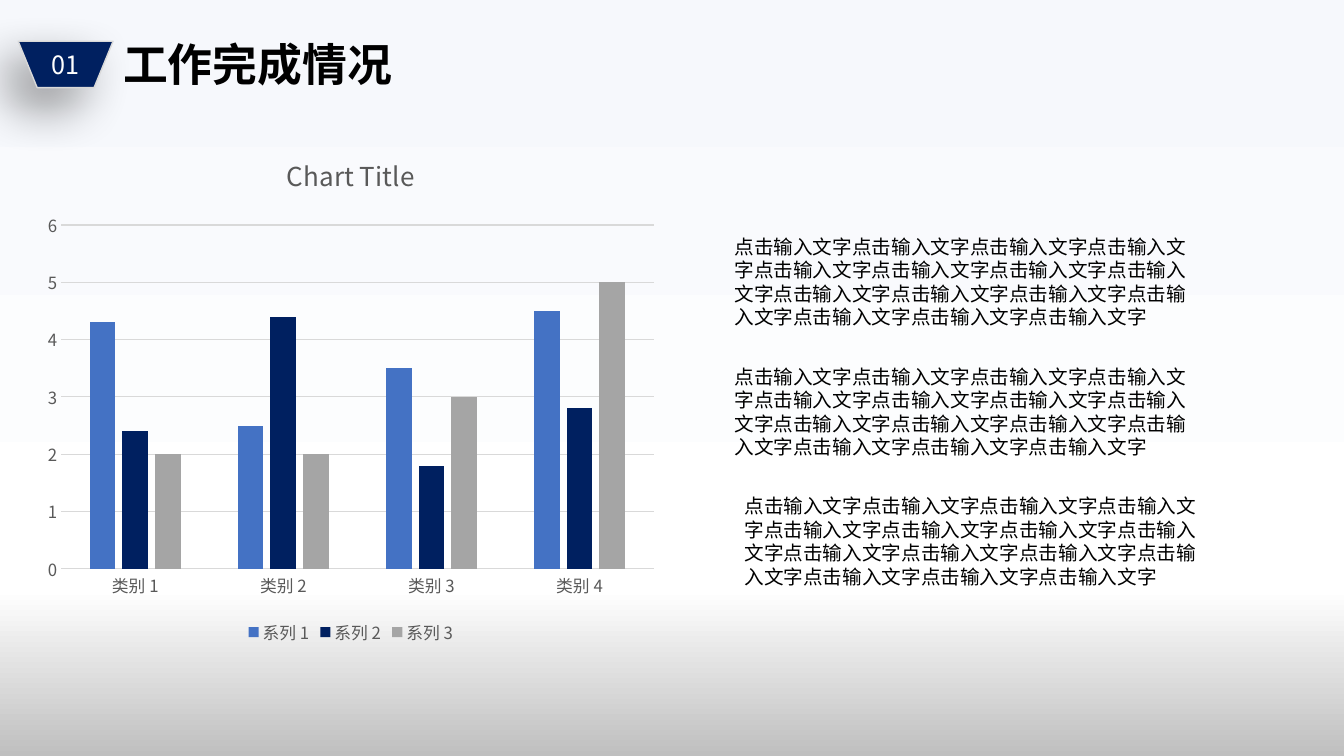
from lxml.etree import SubElement
from pptx import Presentation
from pptx.chart.data import CategoryChartData
from pptx.dml.color import RGBColor
from pptx.enum.chart import XL_CHART_TYPE as ChartType, XL_LEGEND_POSITION as LegendPosition, XL_TICK_MARK as TickMark
from pptx.enum.shapes import MSO_SHAPE as Preset
from pptx.enum.text import MSO_ANCHOR as Anchor, MSO_AUTO_SIZE as AutoSize, PP_ALIGN as Align
from pptx.oxml.ns import qn
from pptx.util import Cm, Pt

FONT = "Noto Sans CJK SC"
BLACK = RGBColor(0x00, 0x00, 0x00)
WHITE = RGBColor(0xFF, 0xFF, 0xFF)
NAVY = RGBColor(0x00, 0x20, 0x60)
BLUE = RGBColor(0x44, 0x72, 0xC4)
GRAY = RGBColor(0xA5, 0xA5, 0xA5)
LABEL_GRAY = RGBColor(0x59, 0x59, 0x59)
RULE_GRAY = RGBColor(0xD9, 0xD9, 0xD9)
PALE_BLUE = RGBColor(0xF6, 0xF8, 0xFC)
FLOOR_GRAY = RGBColor(0xBF, 0xBF, 0xBF)

BACKDROP_STOPS = [(0, PALE_BLUE), (78, WHITE), (100, FLOOR_GRAY)]
CATEGORIES = ["类别 1", "类别 2", "类别 3", "类别 4"]
SERIES = [
    ("系列 1", [4.3, 2.5, 3.5, 4.5], BLUE),
    ("系列 2", [2.4, 4.4, 1.8, 2.8], NAVY),
    ("系列 3", [2, 2, 3, 5], GRAY),
]
PASSAGE = "点击输入文字" * 15


def format_font(font, size, color, bold=False):
    font.name, font.size, font.bold = FONT, Pt(size), bold
    font.color.rgb = color


def write_text(frame, text, size=14, color=BLACK, bold=False,
               align=Align.LEFT, anchor=Anchor.TOP, fit=AutoSize.NONE):
    frame.word_wrap = True
    frame.auto_size = fit
    frame.vertical_anchor = anchor
    paragraph = frame.paragraphs[0]
    paragraph.alignment = align
    run = paragraph.add_run()
    run.text = text
    format_font(run.font, size, color, bold)
    fonts = run.font._element
    SubElement(fonts, qn("a:ea"), typeface=FONT)


def paint_backdrop(slide):
    fill = slide.background.fill
    fill.gradient()
    fill.gradient_angle = 270
    stops = slide._element.find(".//" + qn("a:gsLst"))
    for stop in list(stops):
        stops.remove(stop)
    for percent, color in BACKDROP_STOPS:
        stop = SubElement(stops, qn("a:gs"), pos=str(percent * 1000))
        SubElement(stop, qn("a:srgbClr"), val=str(color))


def cast_shadow(shape, blur, distance, angle, opacity):
    shape.shadow.inherit = False
    effects = shape._element.spPr.find(qn("a:effectLst"))
    shadow = SubElement(effects, qn("a:outerShdw"), blurRad=str(Pt(blur)), dist=str(Pt(distance)),
                        dir=str(angle * 60000), algn="tr", rotWithShape="0")
    color = SubElement(shadow, qn("a:srgbClr"), val=str(BLACK))
    SubElement(color, qn("a:alpha"), val=str(opacity * 1000))


def add_heading(slide, left, top, width, height):
    badge_width = Cm(2.39)
    title = slide.shapes.title
    title.left, title.top = left + badge_width, top
    title.width, title.height = width - badge_width, height
    write_text(title.text_frame, "工作完成情况", size=32, bold=True, fit=AutoSize.SHAPE_TO_FIT_TEXT)

    badge = slide.shapes.add_shape(Preset.FLOWCHART_MANUAL_OPERATION,
                                   left, top + Cm(0.23), badge_width, Cm(1.17))
    badge.fill.solid()
    badge.fill.fore_color.rgb = NAVY
    badge.line.color.rgb = RULE_GRAY
    badge.line.width = Pt(1)
    cast_shadow(badge, blur=35, distance=20, angle=135, opacity=40)
    write_text(badge.text_frame, "01", size=18, color=WHITE, align=Align.CENTER, anchor=Anchor.MIDDLE)


def add_progress_chart(slide, left, top, width, height):
    progress = CategoryChartData()
    progress.categories = CATEGORIES
    for name, values, _ in SERIES:
        progress.add_series(name, values)
    chart = slide.shapes.add_chart(ChartType.COLUMN_CLUSTERED, left, top, width, height, progress).chart
    format_font(chart.font, 10, BLACK)

    chart.has_title = True
    heading = chart.chart_title.text_frame
    heading.text = "Chart Title"
    format_font(heading.paragraphs[0].runs[0].font, 18.6, LABEL_GRAY)

    chart.has_legend = True
    chart.legend.position = LegendPosition.BOTTOM
    chart.legend.include_in_layout = False
    format_font(chart.legend.font, 12, LABEL_GRAY)

    for axis in (chart.category_axis, chart.value_axis):
        axis.major_tick_mark = axis.minor_tick_mark = TickMark.NONE
        format_font(axis.tick_labels.font, 12, LABEL_GRAY)
    chart.value_axis.format.line.fill.background()
    for line in (chart.category_axis.format.line, chart.value_axis.major_gridlines.format.line):
        line.color.rgb = RULE_GRAY
        line.width = Pt(0.75)

    columns = chart.plots[0]
    columns.gap_width, columns.overlap = 219, -27
    columns.vary_by_categories = False
    for series, (_, _, color) in zip(columns.series, SERIES):
        series.format.fill.solid()
        series.format.fill.fore_color.rgb = color


def add_passages(slide, left, top, width, height):
    step = Cm(3.27)
    for index, indent in enumerate((Cm(0), Cm(0), Cm(0.25))):
        passage = slide.shapes.add_textbox(left + indent, top + index * step, width, height)
        write_text(passage.text_frame, PASSAGE, fit=AutoSize.SHAPE_TO_FIT_TEXT)


def build_progress_slide(deck):
    slide = deck.slides.add_slide(deck.slide_layouts[5])
    paint_backdrop(slide)
    add_heading(slide, Cm(0.46), Cm(0.81), Cm(13.06), Cm(1.63))
    add_progress_chart(slide, Cm(0.89), Cm(3.35), Cm(15.9), Cm(13))
    add_passages(slide, Cm(18.26), Cm(5.79), Cm(12.12), Cm(2.64))


def main():
    deck = Presentation()
    deck.slide_width, deck.slide_height = Cm(33.87), Cm(19.05)
    build_progress_slide(deck)
    deck.save("out.pptx")


if __name__ == "__main__":
    main()
